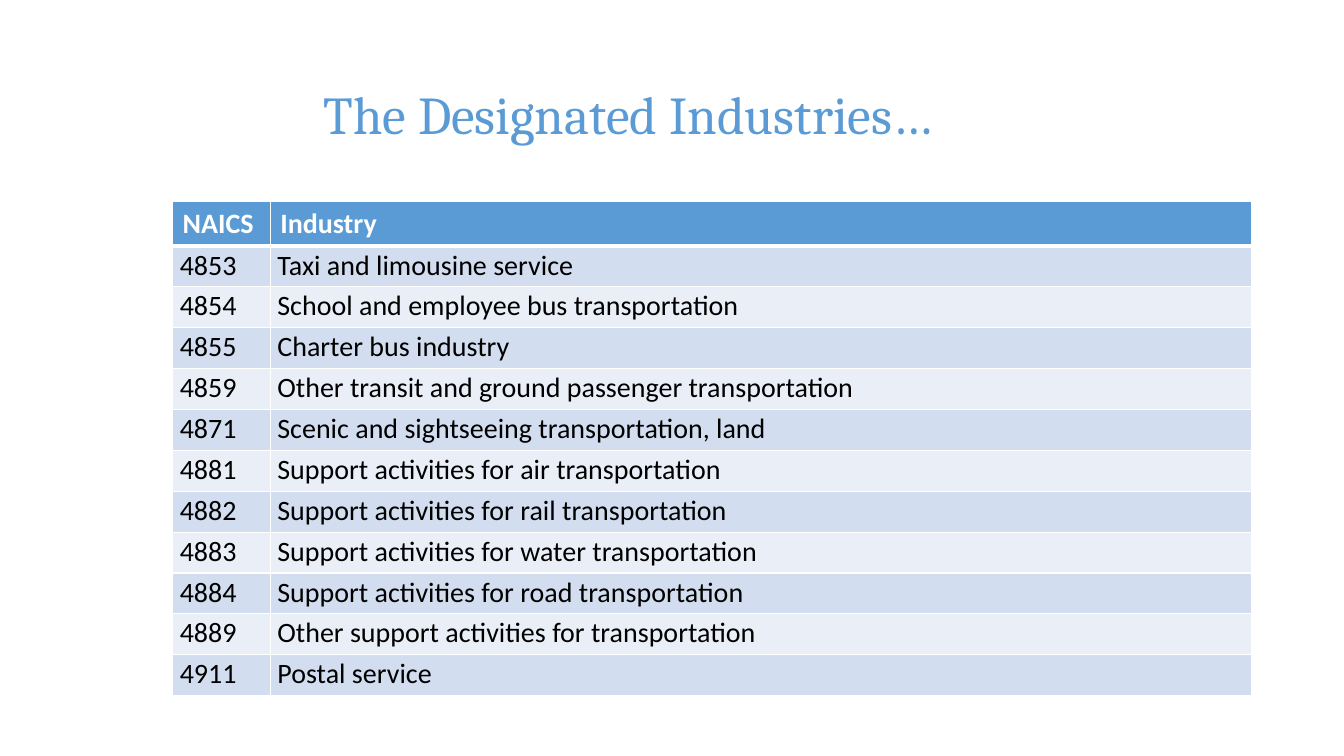
from dataclasses import dataclass

from lxml import etree
from pptx import Presentation
from pptx import util as u
from pptx.dml.color import RGBColor
from pptx.enum import text
from pptx.oxml import ns


@dataclass(frozen=True)
class Theme:
    blue: str = "5B9BD5"
    white: str = "FFFFFF"
    black: str = "000000"
    bands: tuple = ("D2DEEF", "EAEFF7")
    head: str = "Cambria"
    body: str = "Calibri"
    large: int = 38
    small: int = 20


THEME = Theme()

ROWS = [
    ("NAICS", "Industry"),
    ("4853", "Taxi and limousine service"),
    ("4854", "School and employee bus transportation"),
    ("4855", "Charter bus industry"),
    ("4859", "Other transit and ground passenger transportation"),
    ("4871", "Scenic and sightseeing transportation, land"),
    ("4881", "Support activities for air transportation"),
    ("4882", "Support activities for rail transportation"),
    ("4883", "Support activities for water transportation"),
    ("4884", "Support activities for road transportation"),
    ("4889", "Other support activities for transportation"),
    ("4911", "Postal service"),
]


def add_run(para, words, face, size, color, bold=False):
    run = para.add_run()
    run.text = words
    run.font.name = face
    run.font.size = u.Pt(size)
    run.font.bold = bold
    run.font.color.rgb = RGBColor.from_string(color)


def add_title(slide, words, left, top, width, height):
    title = slide.shapes.title
    title.left, title.top = u.Cm(left), u.Cm(top)
    title.width, title.height = u.Cm(width), u.Cm(height)
    frame = title.text_frame
    frame.auto_size = text.MSO_AUTO_SIZE.NONE
    frame.word_wrap = True
    frame.vertical_anchor = text.MSO_ANCHOR.MIDDLE
    frame.margin_left = u.Cm(1.71)
    para = frame.paragraphs[0]
    para.alignment = text.PP_ALIGN.LEFT
    add_run(para, words, THEME.head, THEME.large, THEME.blue)


def set_edges(cell, widths):
    props = cell._tc.get_or_add_tcPr()
    for spot, (side, width) in enumerate(widths.items()):
        line = etree.Element(ns.qn(f"a:ln{side}"), w=str(u.Pt(width)))
        fill = etree.SubElement(line, ns.qn("a:solidFill"))
        etree.SubElement(fill, ns.qn("a:srgbClr"), val=THEME.white)
        props.insert(spot, line)


def fill_cell(cell, words, row):
    head = row == 0
    cell.fill.solid()
    color = THEME.blue if head else THEME.bands[(row - 1) % 2]
    cell.fill.fore_color.rgb = RGBColor.from_string(color)
    set_edges(cell, {"L": 1, "R": 1, "T": 3 if row == 1 else 1, "B": 3 if head else 1})
    para = cell.text_frame.paragraphs[0]
    if not head:
        cell.margin_left = cell.margin_right = u.Cm(0.18)
        cell.margin_top = cell.margin_bottom = 0
        para.line_spacing = 1.07
    add_run(para, words, THEME.body, THEME.small,
            THEME.white if head else THEME.black, head)


def add_grid(slide, rows, left, top, width, height):
    code, first = 2.46, 1.09
    frame = slide.shapes.add_table(len(rows), 2, u.Cm(left), u.Cm(top),
                                   u.Cm(width), u.Cm(height))
    table = frame.table
    table.columns[0].width = u.Cm(code)
    table.columns[1].width = u.Cm(width - code)
    for index, pair in enumerate(rows):
        share = first if index == 0 else (height - first) / (len(rows) - 1)
        table.rows[index].height = u.Cm(share)
        for col, words in enumerate(pair):
            fill_cell(table.cell(index, col), words, index)


def main():
    deck = Presentation()
    deck.slide_width, deck.slide_height = u.Cm(33.87), u.Cm(19.05)
    slide = deck.slides.add_slide(deck.slide_layouts[5])
    add_title(slide, "The Designated Industries…", 6.45, 1.02, 25.1, 3.68)
    add_grid(slide, ROWS, 4.35, 5.08, 27.2, 12.42)
    deck.save("out.pptx")


if __name__ == "__main__":
    main()
